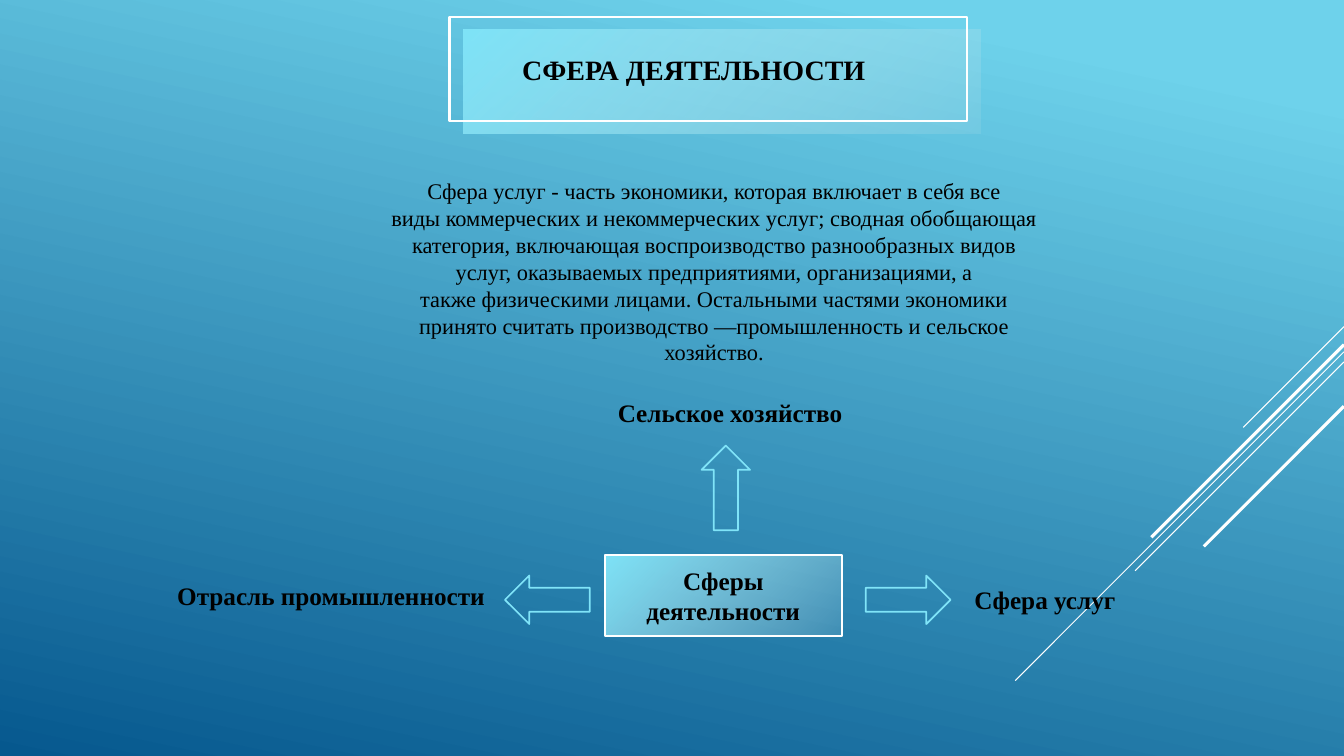
from pptx import Presentation
from pptx.dml.color import RGBColor
from pptx.enum.shapes import MSO_CONNECTOR as Conn, MSO_SHAPE as Kind
from pptx.enum.text import MSO_ANCHOR as Anchor, PP_ALIGN as Align
from pptx.oxml.ns import qn
from pptx.util import Pt
from lxml.etree import SubElement

WHITE = RGBColor(0xFF, 0xFF, 0xFF)
BLACK = RGBColor(0, 0, 0)
SKY = RGBColor(0x6E, 0xD2, 0xEB)
NAVY = RGBColor(0x06, 0x58, 0x8E)
AQUA = RGBColor(0x80, 0xE4, 0xF8)
PALE = RGBColor(0xC0, 0xE2, 0xE9)

WIDE, HIGH = 960, 540
FONT = "Times New Roman"

# y at the right edge, length along each axis, width
RAYS = [
    (233.3, 72, 0.75),
    (251.3, 234.8, 0.75),
    (258.5, 149.2, 0.75),
    (246.2, 137.6, 2.25),
    (290.2, 100.1, 2.25),
]
# left, top, rotation
ARROWS = [(360.7, 411.1, 180), (618.5, 411.1, 0), (488.2, 331.2, 270)]

# In the texts, "~" ties two words with a no-break space
# left, top, width, text
LABELS = [
    (119.5, 411.1, 241.2, "Отрасль~промышленности~"),
    (689, 414, 115.9, "Сфера услуг"),
    (434.2, 280.1, 177.1, "Сельское~хозяйство"),
]
ABOUT = (
    "Сфера услуг -~часть~экономики, которая включает в себя все "
    "виды~коммерческих~и~некоммерческих услуг; сводная обобщающая "
    "категория, включающая воспроизводство разнообразных видов "
    "услуг, оказываемых~предприятиями,~организациями, а "
    "также~физическими лицами. Остальными частями экономики "
    "принято считать~производство~—промышленность~и~сельское "
    "хозяйство."
)


def blend(fill, angle, *stops):
    """Apply a two-stop gradient; angle is clockwise, stops are (position, colour)."""
    fill.gradient()
    fill.gradient_angle = 360 - angle
    for stop, (place, color) in zip(fill.gradient_stops, stops):
        stop.position = place
        stop.color.rgb = color


def glaze(shape):
    """Fill with aqua that fades to a nearly clear pale tone."""
    blend(shape.fill, 45, (0, AQUA), (1, PALE))
    grad = shape._element.spPr.find(qn("a:gradFill"))
    last = list(grad.iter(qn("a:srgbClr")))[-1]
    SubElement(last, qn("a:alpha"), val="15000")


def add_ray(slide, y, size, width):
    ray = slide.shapes.add_connector(
        Conn.STRAIGHT, Pt(WIDE), Pt(y), Pt(WIDE - size), Pt(y + size))
    ray.line.color.rgb = WHITE
    ray.line.width = Pt(width)
    SubElement(ray._element.spPr, qn("a:effectLst"))


def add_form(slide, kind, box, color=None, width=0):
    """Add an unfilled shape, outlined when a colour is given."""
    form = slide.shapes.add_shape(kind, *map(Pt, box))
    form.shadow.inherit = False
    form.fill.background()
    if color is None:
        form.line.fill.background()
    else:
        form.line.color.rgb = color
        form.line.width = Pt(width)
    return form


def put_text(shape, text, size, bold=True, align=Align.LEFT, wrap=True):
    frame = shape.text_frame
    frame.word_wrap = wrap
    para = frame.paragraphs[0]
    para.text = text.replace("~", chr(160))
    para.alignment = align
    font = para.font
    font.name, font.size, font.bold = FONT, Pt(size), bold
    font.color.rgb = BLACK
    return frame


def add_text(slide, box, text, size, **style):
    return put_text(slide.shapes.add_textbox(*map(Pt, box)), text, size, **style)


def main():
    deck = Presentation()
    deck.slide_width, deck.slide_height = Pt(WIDE), Pt(HIGH)
    slide = deck.slides.add_slide(deck.slide_layouts[6])
    blend(slide.background.fill, 102, (0.1, SKY), (1, NAVY))

    for ray in RAYS:
        add_ray(slide, *ray)

    glaze(add_form(slide, Kind.RECTANGLE, (331.2, 20.9, 369.4, 74.2)))
    title = add_text(slide, (365.8, 37.4, 280.1, 24.5), "СФЕРА ДЕЯТЕЛЬНОСТИ", 20)
    title.vertical_anchor = Anchor.MIDDLE

    add_text(slide, (270, 123.1, 480.2, 143.3), ABOUT, 16,
             bold=False, align=Align.CENTER)

    hub = add_form(slide, Kind.RECTANGLE, (432, 396.7, 169.2, 57.6), WHITE, 1.25)
    glaze(hub)
    put_text(hub, "Сферы деятельности", 18, align=Align.CENTER)
    hub.text_frame.vertical_anchor = Anchor.MIDDLE

    for left, top, turn in ARROWS:
        arrow = add_form(slide, Kind.RIGHT_ARROW, (left, top, 60.5, 34.6), AQUA, 1.25)
        arrow.rotation = turn
    for left, top, width, text in LABELS:
        add_text(slide, (left, top, width, 28.8), text, 18, wrap=False)

    add_form(slide, Kind.RECTANGLE, (321.1, 12.2, 369.4, 74.2), WHITE, 1.5)
    deck.save("out.pptx")


if __name__ == "__main__":
    main()
